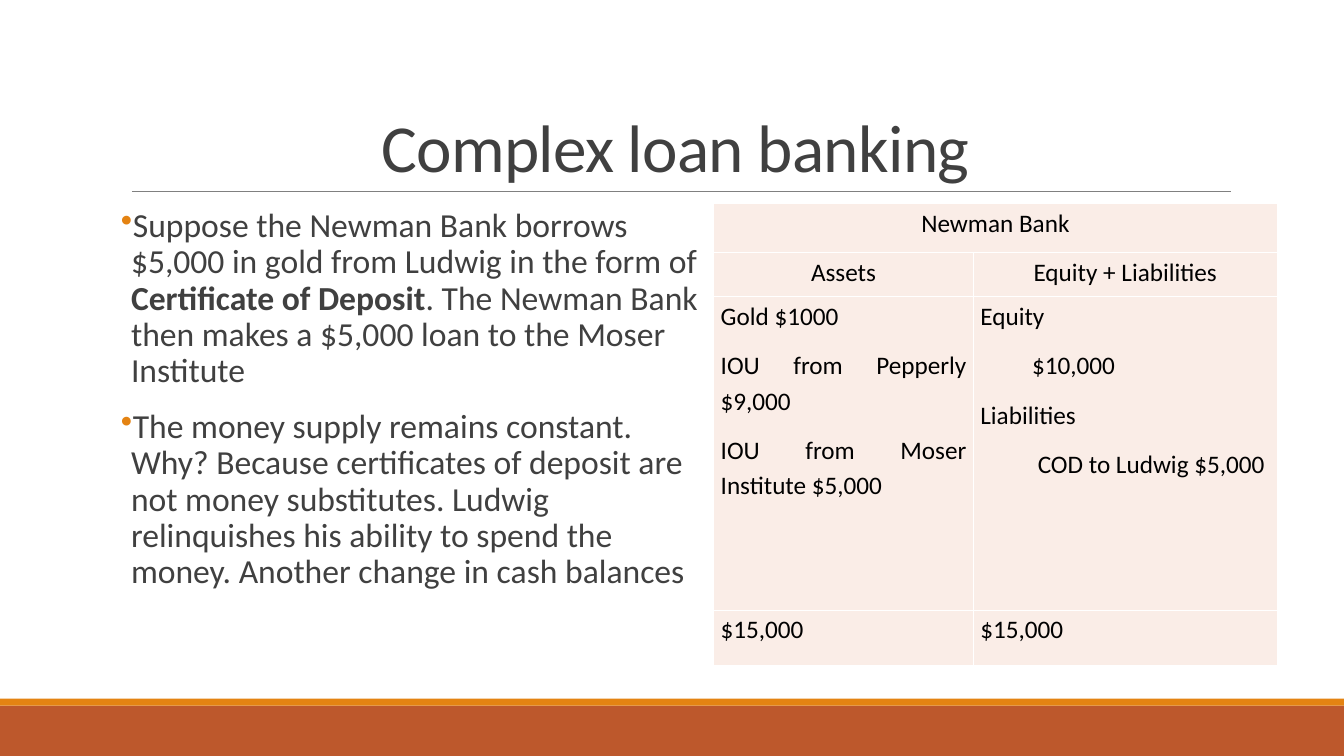
from dataclasses import dataclass

from lxml.etree import SubElement
from pptx import Presentation
from pptx.dml.color import RGBColor
from pptx.enum.shapes import MSO_CONNECTOR, MSO_SHAPE
from pptx.enum.text import MSO_ANCHOR, MSO_AUTO_SIZE, PP_ALIGN
from pptx.oxml import parse_xml
from pptx.oxml.ns import nsdecls, qn
from pptx.util import Pt


@dataclass(frozen=True)
class Theme:
    font: str = "Calibri"
    ink: str = "404040"
    black: str = "000000"
    white: str = "FFFFFF"
    rule: str = "808080"
    orange: str = "E48312"
    rust: str = "BD582C"
    cell: str = "FAEDE7"
    title_size: int = 48
    body_size: int = 24
    table_size: int = 18


class SlideBuilder:
    def __init__(self, page, theme):
        self.page = page
        self.theme = theme

    def place(self, shape, box):
        shape.left, shape.top, shape.width, shape.height = map(Pt, box)

    def span(self, para, text, size, color, bold=False):
        run = para.add_run()
        run.text = text
        run.font.name = self.theme.font
        run.font.size = Pt(size)
        run.font.bold = bold
        run.font.color.rgb = RGBColor.from_string(color)
        return run

    def bar(self, box, color):
        shape = self.page.shapes.add_shape(MSO_SHAPE.RECTANGLE, *map(Pt, box))
        shape.shadow.inherit = False
        shape.fill.solid()
        shape.fill.fore_color.rgb = RGBColor.from_string(color)
        shape.line.fill.background()

    def rule(self, left, right, top):
        line = self.page.shapes.add_connector(
            MSO_CONNECTOR.STRAIGHT, Pt(left), Pt(top), Pt(right), Pt(top))
        line.line.color.rgb = RGBColor.from_string(self.theme.rule)
        line.line.width = Pt(0.5)
        SubElement(line._element.spPr, qn("a:effectLst"))

    def title(self, text, box):
        title = self.page.shapes.title
        self.place(title, box)
        frame = title.text_frame
        frame.word_wrap = True
        frame.auto_size = MSO_AUTO_SIZE.NONE
        frame.vertical_anchor = MSO_ANCHOR.BOTTOM
        para = frame.paragraphs[0]
        para.alignment = PP_ALIGN.CENTER
        para.line_spacing = 0.85
        run = self.span(para, text, self.theme.title_size, self.theme.ink)
        run.font._element.set("spc", "-50")

    def bullets(self, items, box):
        frame = self.page.shapes.add_textbox(*map(Pt, box)).text_frame
        frame.word_wrap = True
        frame.margin_left = frame.margin_right = 0
        for index, spans in enumerate(items):
            para = frame.add_paragraph() if index else frame.paragraphs[0]
            para.line_spacing = 0.9
            para.space_before = Pt(12)
            para.space_after = Pt(2)
            properties = para._p.get_or_add_pPr()
            properties.set("marL", str(Pt(7.2)))
            properties.set("indent", str(-Pt(7.2)))
            color = SubElement(properties, qn("a:buClr"))
            SubElement(color, qn("a:srgbClr"), val=self.theme.orange)
            SubElement(properties, qn("a:buChar"), char="•")
            for text, bold in spans:
                self.span(para, text, self.theme.body_size, self.theme.ink, bold)

    def cell(self, cell, lines, alignment, space_after):
        cell.margin_left = cell.margin_right = Pt(5)
        cell.margin_top = cell.margin_bottom = 0
        cell.fill.solid()
        cell.fill.fore_color.rgb = RGBColor.from_string(self.theme.cell)
        properties = cell._tc.get_or_add_tcPr()
        for index, side in enumerate(("lnL", "lnR", "lnT", "lnB")):
            properties.insert(index, parse_xml(
                f'<a:{side} {nsdecls("a")} w="{Pt(1)}"><a:solidFill>'
                f'<a:srgbClr val="{self.theme.white}"/></a:solidFill></a:{side}>'))
        for index, (text, indent) in enumerate(lines):
            frame = cell.text_frame
            para = frame.add_paragraph() if index else frame.paragraphs[0]
            para.alignment = alignment
            para.line_spacing = 1.15
            para.space_after = Pt(space_after)
            if indent:
                para._p.get_or_add_pPr().set("marL", str(Pt(indent)))
            self.span(para, text, self.theme.table_size, self.theme.black)

    def balance_sheet(self, rows, box, widths, heights):
        table = self.page.shapes.add_table(
            len(heights), len(widths), *map(Pt, box)).table
        table.first_row = table.horz_banding = False
        for column, width in zip(table.columns, widths):
            column.width = Pt(width)
        for row, height in zip(table.rows, heights):
            row.height = Pt(height)
        table.cell(0, 0).merge(table.cell(0, 1))
        for row_index, (alignment, space_after, cells) in enumerate(rows):
            for column_index, lines in enumerate(cells):
                self.cell(table.cell(row_index, column_index), lines,
                          alignment, space_after)


def main():
    theme = Theme()
    deck = Presentation()
    deck.slide_width, deck.slide_height = Pt(960), Pt(540)
    page = deck.slides.add_slide(deck.slide_layouts[5])
    builder = SlideBuilder(page, theme)

    builder.bar((0, 504, 960, 36), theme.rust)
    builder.bar((0, 499, 960, 5), theme.orange)
    builder.rule(94.3, 879, 136.8)
    builder.title("Complex loan banking", (86.4, 22.3, 792, 114.5))
    builder.bullets([
        [("Suppose the Newman Bank borrows $5,000 in gold from Ludwig "
          "in the form of ", False),
         ("Certificate of Deposit", True),
         (". The Newman Bank then makes a $5,000 loan to the Moser Institute",
          False)],
        [("The money supply remains constant. Why? Because certificates of "
          "deposit are not money substitutes. Ludwig relinquishes his ability "
          "to spend the money. Another change in cash balances", False)],
    ], (86.4, 145.5, 423.4, 316.8))

    center, justify = PP_ALIGN.CENTER, PP_ALIGN.JUSTIFY
    total = [("$15,000", 0)]
    widths, heights = (185.5, 217), (35, 31.5, 224, 39.5)
    builder.balance_sheet([
        (center, 10, [[("Newman Bank", 0)], []]),
        (center, 0, [[("Assets", 0)], [("Equity + Liabilities", 0)]]),
        (justify, 10, [
            [("Gold $1000", 0), ("IOU from Pepperly $9,000", 0),
             ("IOU from Moser Institute $5,000", 0)],
            [("Equity", 0), ("$10,000", 37), ("Liabilities", 0),
             ("COD to Ludwig $5,000", 41)]]),
        (justify, 10, [total, total]),
    ], (509.8, 145.5, sum(widths), sum(heights)), widths, heights)

    deck.save("out.pptx")


if __name__ == "__main__":
    main()
